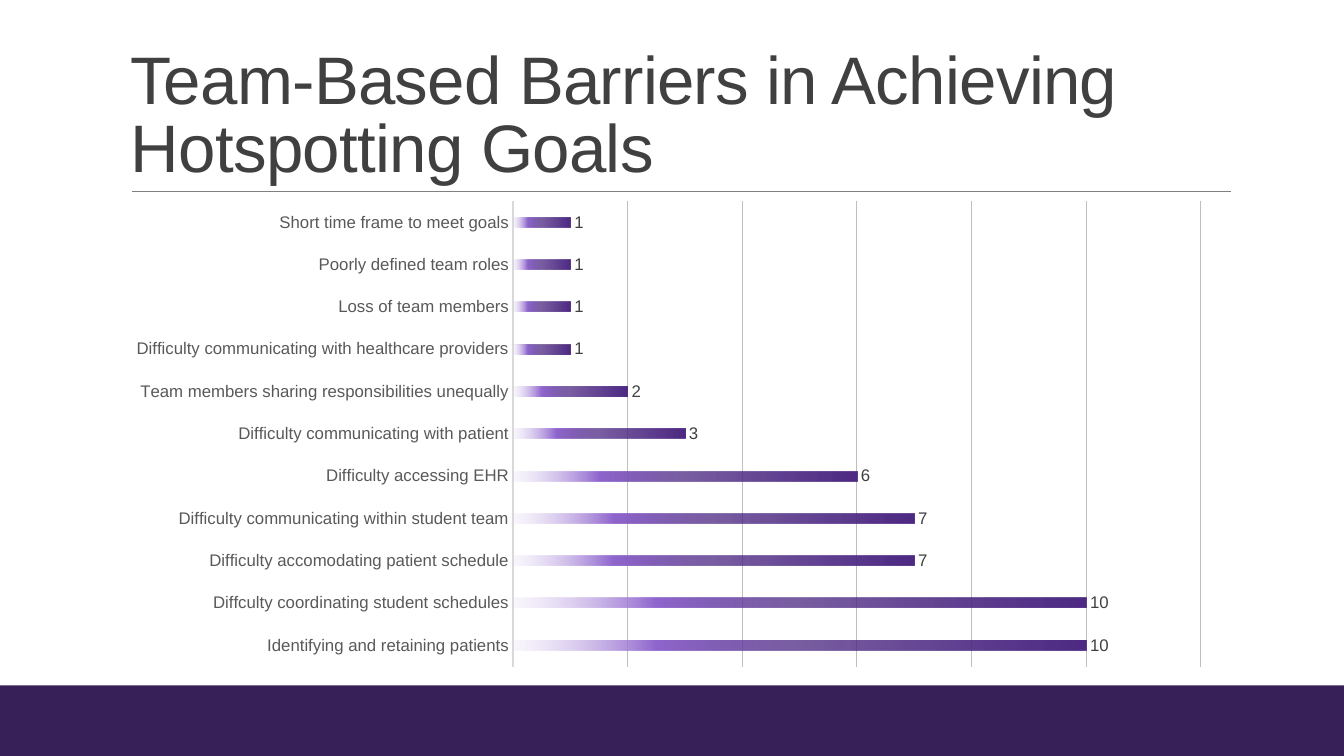
from lxml import etree
from pptx import Presentation
from pptx.chart.data import CategoryChartData
from pptx.dml.color import RGBColor
from pptx.enum.chart import XL_CHART_TYPE as ChartType
from pptx.enum.chart import XL_LABEL_POSITION as LabelPosition
from pptx.enum.chart import XL_TICK_MARK as TickMark
from pptx.enum.shapes import MSO_CONNECTOR as Connector
from pptx.enum.shapes import MSO_SHAPE as Shape
from pptx.enum.text import MSO_ANCHOR as Anchor
from pptx.oxml import parse_xml
from pptx.oxml.ns import nsdecls, qn
from pptx.util import Inches, Pt

FONT = "Arial"
BLACK = RGBColor(0x00, 0x00, 0x00)
DARK_GREY = RGBColor(0x40, 0x40, 0x40)
LABEL_GREY = RGBColor(0x59, 0x59, 0x59)
RULE_GREY = RGBColor(0x80, 0x80, 0x80)
GRID_GREY = RGBColor(0xBF, 0xBF, 0xBF)
AXIS_GREY = RGBColor(0xD9, 0xD9, 0xD9)
FOOTER_PURPLE = RGBColor(0x37, 0x20, 0x58)
DEEP_PURPLE = RGBColor(0x4E, 0x2A, 0x84)
MID_PURPLE = RGBColor(0x90, 0x66, 0xCE)
PALE_PURPLE = RGBColor(0xDA, 0xCC, 0xEF)

BAR_GRADIENT = [
    (0, DEEP_PURPLE, 100),
    (51, DEEP_PURPLE, 75),
    (75, MID_PURPLE, 100),
    (100, PALE_PURPLE, 15),
]
BARRIERS = [
    ("Identifying and retaining patients", 10),
    ("Diffculty coordinating student schedules", 10),
    ("Difficulty accomodating patient schedule", 7),
    ("Difficulty communicating within student team", 7),
    ("Difficulty accessing EHR", 6),
    ("Difficulty communicating with patient", 3),
    ("Team members sharing responsibilities unequally", 2),
    ("Difficulty communicating with healthcare providers", 1),
    ("Loss of team members", 1),
    ("Poorly defined team roles", 1),
    ("Short time frame to meet goals", 1),
]


def style_font(font, size, color):
    """Set typeface, size and colour of a font."""
    font.name = FONT
    font.size = Pt(size)
    font.color.rgb = color


def add_footer_band(slide, left, top, width, height):
    """Fill the given box with the plain footer band."""
    band = slide.shapes.add_shape(
        Shape.RECTANGLE, Inches(left), Inches(top), Inches(width), Inches(height))
    band.shadow.inherit = False
    band.fill.solid()
    band.fill.fore_color.rgb = FOOTER_PURPLE
    band.line.fill.background()


def add_title(slide, left, top, width, height, text):
    """Place the title at the bottom of its box with a rule beneath."""
    box = slide.shapes.add_textbox(
        Inches(left), Inches(top), Inches(width), Inches(height))
    frame = box.text_frame
    frame.word_wrap = True
    frame.vertical_anchor = Anchor.BOTTOM
    frame.text = text
    paragraph = frame.paragraphs[0]
    paragraph.line_spacing = 0.85
    run = paragraph.runs[0]
    style_font(run.font, 48, DARK_GREY)
    run.font._element.set("spc", "-50")

    bottom = Inches(top + height)
    rule = slide.shapes.add_connector(
        Connector.STRAIGHT, Inches(left + 0.11), bottom,
        Inches(left + width + 0.01), bottom)
    rule.line.color.rgb = RULE_GREY
    rule.line.width = Pt(0.5)
    etree.SubElement(rule._element.spPr, qn("a:effectLst"))


def fill_with_gradient(series, stops, angle):
    """Give the bars of a series a linear gradient."""
    stops_xml = "".join(
        f'<a:gs pos="{position * 1000}"><a:srgbClr val="{color}">'
        f'<a:alpha val="{opacity * 1000}"/></a:srgbClr></a:gs>'
        for position, color, opacity in stops)
    gradient = parse_xml(
        f'<a:gradFill {nsdecls("a")} rotWithShape="1"><a:gsLst>{stops_xml}</a:gsLst>'
        f'<a:lin ang="{angle * 60000}" scaled="0"/></a:gradFill>')
    series.format.fill.solid()
    properties = series._element.find(qn("c:spPr"))
    properties.replace(properties.find(qn("a:solidFill")), gradient)


def set_plot_area(chart, left, top, width, height):
    """Fix the inner plot area as fractions of the chart."""
    plot_area = chart._chartSpace.chart.plotArea
    for old_layout in plot_area.findall(qn("c:layout")):
        plot_area.remove(old_layout)
    places = "".join(
        f'<c:{name} val="{value}"/>'
        for name, value in zip("xywh", (left, top, width, height)))
    plot_area.insert(0, parse_xml(
        f'<c:layout {nsdecls("c")}><c:manualLayout><c:layoutTarget val="inner"/>'
        f'<c:xMode val="edge"/><c:yMode val="edge"/>{places}'
        '</c:manualLayout></c:layout>'))


def add_barrier_chart(slide, left, top, width, height):
    """Draw the bar chart of barriers in the given box."""
    data = CategoryChartData()
    data.categories = [name for name, _ in BARRIERS]
    data.add_series("Series 1", [count for _, count in BARRIERS])
    chart = slide.shapes.add_chart(
        ChartType.BAR_CLUSTERED, Inches(left), Inches(top),
        Inches(width), Inches(height), data).chart
    chart.has_legend = False
    chart.has_title = False
    style_font(chart.font, 10, BLACK)
    set_plot_area(chart, 0.36, 0.02, 0.62, 0.96)

    category_axis = chart.category_axis
    category_axis.major_tick_mark = TickMark.NONE
    category_axis.minor_tick_mark = TickMark.NONE
    style_font(category_axis.tick_labels.font, 12, LABEL_GREY)
    category_axis.format.line.color.rgb = AXIS_GREY
    category_axis.format.line.width = Pt(1.5)

    value_axis = chart.value_axis
    value_axis.minimum_scale = 0
    value_axis.maximum_scale = 12
    value_axis.major_unit = 2
    value_axis.visible = False
    value_axis.has_major_gridlines = True
    grid_line = value_axis.major_gridlines.format.line
    grid_line.color.rgb = GRID_GREY
    grid_line.width = Pt(0.75)

    plot = chart.plots[0]
    plot.gap_width = 326
    plot.overlap = -58
    plot.vary_by_categories = False
    series = plot.series[0]
    series.invert_if_negative = False
    fill_with_gradient(series, BAR_GRADIENT, 180)
    labels = series.data_labels
    labels.show_value = True
    labels.position = LabelPosition.OUTSIDE_END
    style_font(labels.font, 12, DARK_GREY)


def main():
    """Build the slide and save it."""
    presentation = Presentation()
    presentation.slide_width = Inches(13.33)
    presentation.slide_height = Inches(7.5)
    slide = presentation.slides.add_slide(presentation.slide_layouts[6])
    add_footer_band(slide, 0, 6.8, 13.33, 0.7)
    add_title(slide, 1.2, 0.31, 11, 1.59,
              "Team-Based Barriers in Achieving Hotspotting Goals")
    add_barrier_chart(slide, 1.13, 1.9, 11, 4.81)
    presentation.save("out.pptx")


if __name__ == "__main__":
    main()
